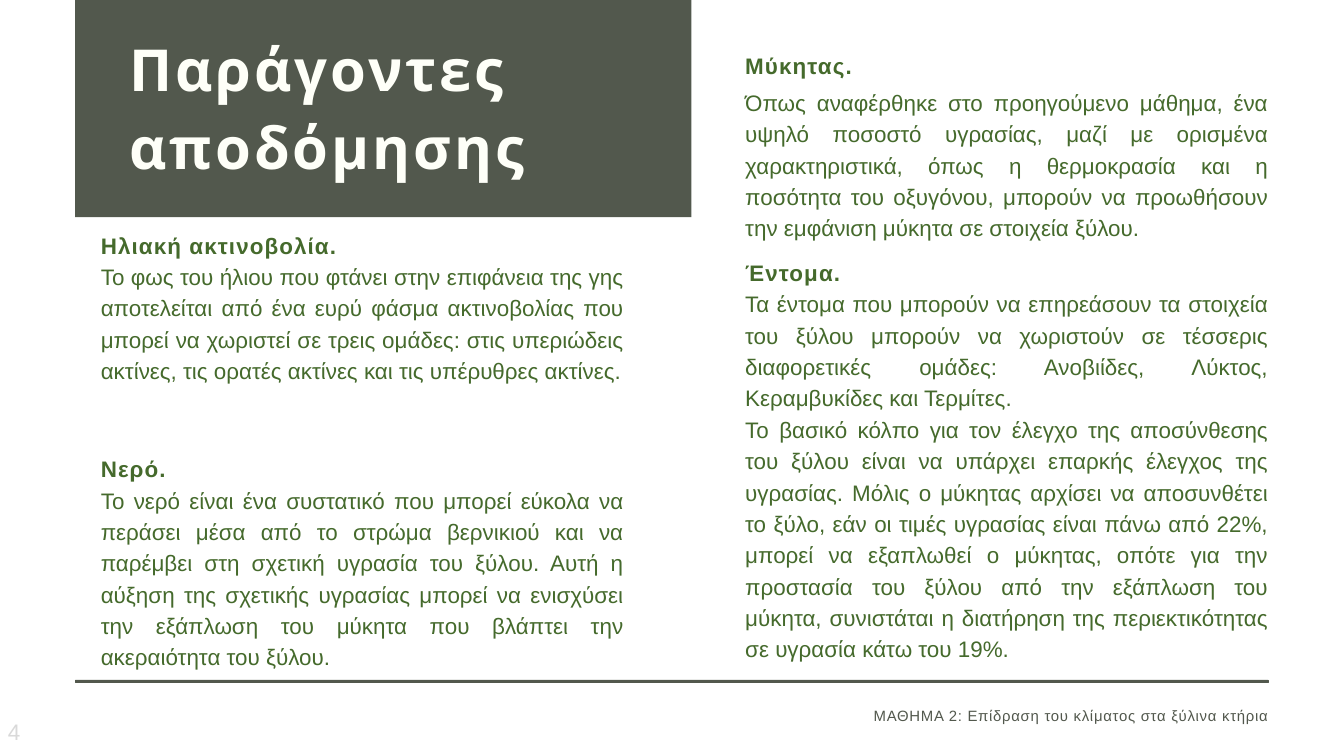
from dataclasses import dataclass

from pptx import Presentation
from pptx.dml.color import RGBColor
from pptx.enum import shapes, text
from pptx.util import Pt


@dataclass(frozen=True)
class Style:
    font: str
    size: float
    color: str
    bold: bool = False
    tracking: float = 0
    leading: float | None = None
    align: text.PP_ALIGN = text.PP_ALIGN.LEFT


@dataclass(frozen=True)
class Box:
    left: float
    top: float
    width: float
    height: float


@dataclass(frozen=True)
class Section:
    box: Box
    heading: str
    body: tuple[str, ...]
    space_after: float = 0


class Theme:
    SLATE = "52584D"
    GREEN = "456A2C"
    TITLE = Style("League Spartan", 62, "FEFFF8", True, 3.1, 83.7)
    HEADING = Style("Arial", 24, GREEN, True, 1.2, 33.6)
    BODY = Style("Arial", 24, GREEN, leading=33.6, align=text.PP_ALIGN.JUSTIFY)
    NUMBER = Style("Arial", 24, "D9D9D9", tracking=1.2)
    FOOTER = Style("Arial", 16, SLATE, tracking=0.8, leading=22.4,
                   align=text.PP_ALIGN.RIGHT)


MARGIN = 80.64
LEFT_COLUMN, RIGHT_COLUMN, COLUMN_WIDTH = 108, 798.5, 560

SECTIONS = [
    Section(
        Box(RIGHT_COLUMN, 51.1, COLUMN_WIDTH, 252.7), "Μύκητας.",
        ("Όπως αναφέρθηκε στο προηγούμενο μάθημα, ένα υψηλό ποσοστό υγρασίας, "
         "μαζί με ορισμένα χαρακτηριστικά, όπως η θερμοκρασία και η ποσότητα του "
         "οξυγόνου, μπορούν να προωθήσουν την εμφάνιση μύκητα σε στοιχεία ξύλου.",),
        space_after=6),
    Section(
        Box(RIGHT_COLUMN, 272.9, COLUMN_WIDTH, 514.8), "Έντομα.",
        ("Τα έντομα που μπορούν να επηρεάσουν τα στοιχεία του ξύλου μπορούν να "
         "χωριστούν σε τέσσερις διαφορετικές ομάδες: Ανοβιίδες, Λύκτος, "
         "Κεραμβυκίδες και Τερμίτες.",
         "Το βασικό κόλπο για τον έλεγχο της αποσύνθεσης του ξύλου είναι να υπάρχει "
         "επαρκής έλεγχος της υγρασίας. Μόλις ο μύκητας αρχίσει να αποσυνθέτει το "
         "ξύλο, εάν οι τιμές υγρασίας είναι πάνω από 22%, μπορεί να εξαπλωθεί ο "
         "μύκητας, οπότε για την προστασία του ξύλου από την εξάπλωση του μύκητα, "
         "συνιστάται η διατήρηση της περιεκτικότητας σε υγρασία κάτω του 19%.")),
    Section(
        Box(LEFT_COLUMN, 243.4, COLUMN_WIDTH, 274.3), "Ηλιακή ακτινοβολία.",
        ("Το φως του ήλιου που φτάνει στην επιφάνεια της γης αποτελείται από ένα "
         "ευρύ φάσμα ακτινοβολίας που μπορεί να χωριστεί σε τρεις ομάδες: στις "
         "υπεριώδεις ακτίνες, τις ορατές ακτίνες και τις υπέρυθρες ακτίνες.",)),
    Section(
        Box(LEFT_COLUMN, 483.1, COLUMN_WIDTH, 308.9), "Νερό.",
        ("Το νερό είναι ένα συστατικό που μπορεί εύκολα να περάσει μέσα από το "
         "στρώμα βερνικιού και να παρέμβει στη σχετική υγρασία του ξύλου. Αυτή η "
         "αύξηση της σχετικής υγρασίας μπορεί να ενισχύσει την εξάπλωση του μύκητα "
         "που βλάπτει την ακεραιότητα του ξύλου.",)),
]


def place(box: Box) -> list[Pt]:
    return [Pt(v) for v in (box.left, box.top, box.width, box.height)]


def add_bar(slide, box: Box, line_width: float = 0):
    sp = slide.shapes.add_shape(shapes.MSO_SHAPE.RECTANGLE, *place(box))
    sp.shadow.inherit = False
    sp.fill.solid()
    sp.fill.fore_color.rgb = RGBColor.from_string(Theme.SLATE)
    if line_width:
        sp.line.color.rgb = RGBColor.from_string(Theme.SLATE)
        sp.line.width = Pt(line_width)
    else:
        sp.line.fill.background()
    return sp


def add_text(slide, box: Box, lines: list[tuple[str, Style]],
             space_after: float = 0):
    sp = slide.shapes.add_textbox(*place(box))
    tf = sp.text_frame
    tf.word_wrap = True
    tf.margin_left = tf.margin_top = tf.margin_right = tf.margin_bottom = 0
    for i, (content, style) in enumerate(lines):
        p = tf.paragraphs[0] if i == 0 else tf.add_paragraph()
        r = p.add_run()
        r.text = content
        p.alignment = style.align
        p.space_after = Pt(space_after)
        if style.leading:
            p.line_spacing = Pt(style.leading)
        p.font.name = style.font
        p.font.size = Pt(style.size)
        p.font.bold = style.bold
        p.font.color.rgb = RGBColor.from_string(style.color)
        if style.tracking:
            # Letter spacing is stored in hundredths of a point
            r._r.get_or_add_rPr().set("spc", str(round(style.tracking * 100)))
    return sp


def main() -> None:
    prs = Presentation()
    prs.slide_width, prs.slide_height = Pt(1440), Pt(810)
    slide = prs.slides.add_slide(prs.slide_layouts[6])

    # Text sections in two columns
    for s in SECTIONS:
        lines = [(s.heading, Theme.HEADING)] + [(b, Theme.BODY) for b in s.body]
        add_text(slide, s.box, lines, s.space_after)

    # Title band
    add_bar(slide, Box(MARGIN, 0, 660.2, 232.6))
    add_text(slide, Box(139, 26.6, 544.3, 170),
             [("Παράγοντες αποδόμησης", Theme.TITLE)])

    # Footer: rule, page number and lesson name
    add_bar(slide, Box(MARGIN, 728.6, 1278, 2.9), line_width=0.75)
    number = add_text(slide, Box(8.6, 773.3, 160.6, 21.6), [("4", Theme.NUMBER)])
    number.text_frame.vertical_anchor = text.MSO_ANCHOR.MIDDLE
    add_text(slide, Box(760.3, 753.8, 599, 20.9),
             [("ΜΑΘΗΜΑ 2: Επίδραση του κλίματος στα ξύλινα κτήρια", Theme.FOOTER)])

    prs.save("out.pptx")


if __name__ == "__main__":
    main()
